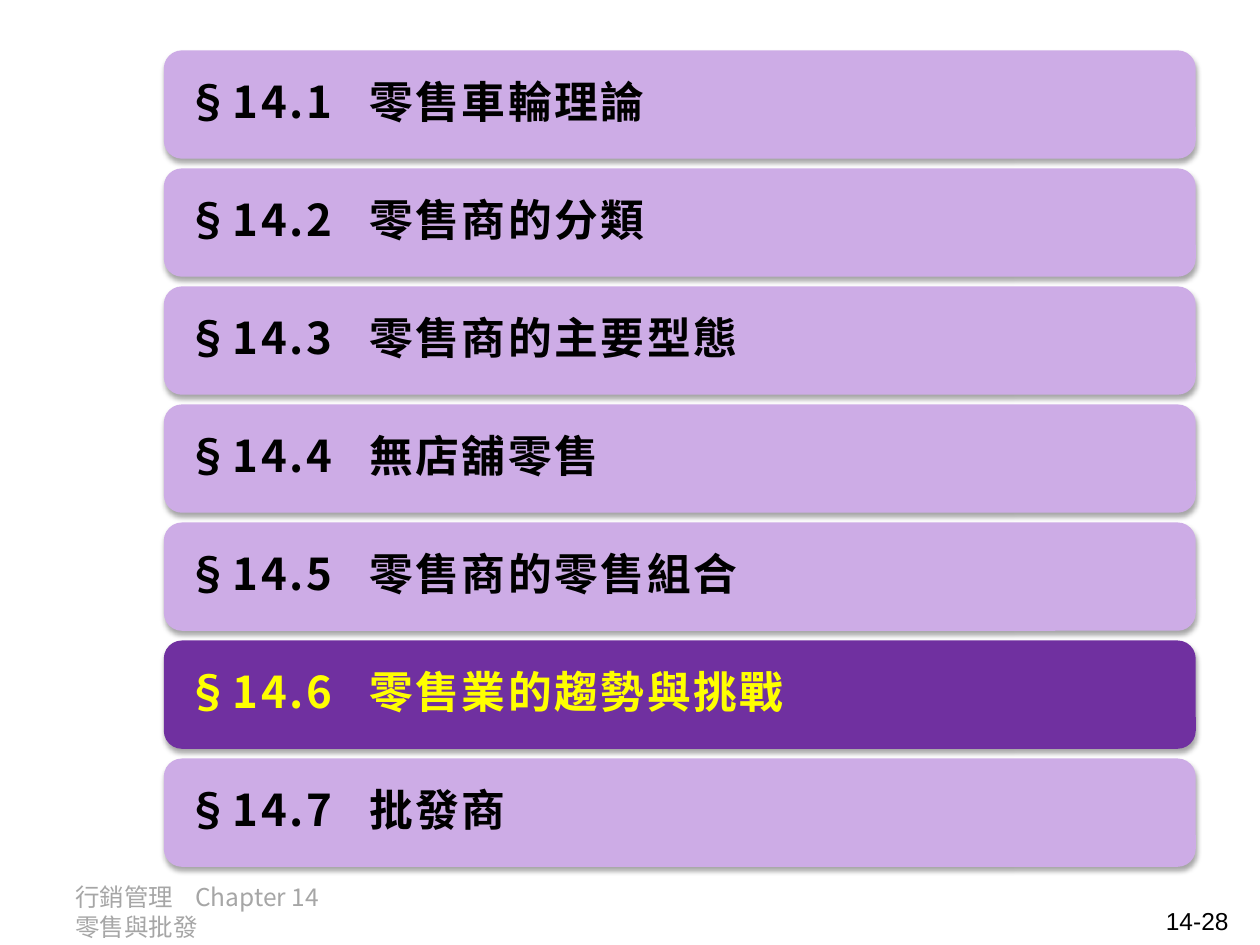
from typing import NamedTuple

from lxml.etree import SubElement
from pptx import Presentation
from pptx.dml.color import RGBColor
from pptx.enum.shapes import MSO_SHAPE
from pptx.enum.text import MSO_ANCHOR, PP_ALIGN
from pptx.oxml.ns import qn
from pptx.util import Inches, Pt

CJK_FONT = "Noto Sans CJK SC"
LATIN_FONT = "Arial"
LEFT, WIDTH, HEIGHT = 1.3, 8.19, 0.86
TOP, BOTTOM = 0.4, 6.88
TITLE_TAB = 1.45


class Section(NamedTuple):
    title: str
    fill: str = "CDACE6"
    color: str = "000000"


SECTIONS = [
    Section("零售車輪理論"),
    Section("零售商的分類"),
    Section("零售商的主要型態"),
    Section("無店舖零售"),
    Section("零售商的零售組合"),
    Section("零售業的趨勢與挑戰", fill="7030A0", color="FFFF00"),
    Section("批發商"),
]


def rgb(value: str) -> RGBColor:
    return RGBColor.from_string(value)


def set_attributes(target, values: dict) -> None:
    for name, value in values.items():
        setattr(target, name, value)


def add_tab_stop(paragraph, position: float) -> None:
    tabs = SubElement(paragraph._p.get_or_add_pPr(), qn("a:tabLst"))
    SubElement(tabs, qn("a:tab"), pos=str(Inches(position)), algn="l")


def add_run(paragraph, text: str, size: float, color: str, font: str,
            bold: bool = False, spacing: float = 0) -> None:
    """Add a run; spacing is the extra room between letters in points."""
    run = paragraph.add_run()
    run.text = text
    set_attributes(run.font, {"size": Pt(size), "bold": bold, "name": font})
    run.font.color.rgb = rgb(color)
    properties = run._r.get_or_add_rPr()
    if spacing:
        properties.set("spc", str(round(spacing * 100)))
    SubElement(properties, qn("a:ea"), typeface=CJK_FONT)


def add_soft_shadow(shape) -> None:
    shape.shadow.inherit = False
    effects = shape._element.spPr.find(qn("a:effectLst"))
    shadow = SubElement(effects, qn("a:outerShdw"), blurRad=str(Pt(3.1)),
                        dist=str(Pt(1.8)), dir="5400000", rotWithShape="0")
    color = SubElement(shadow, qn("a:srgbClr"), val="000000")
    SubElement(color, qn("a:alpha"), val="35000")


def add_section_bar(slide, index: int, section: Section) -> None:
    pitch = (BOTTOM - TOP - HEIGHT) / (len(SECTIONS) - 1)
    shape = slide.shapes.add_shape(
        MSO_SHAPE.ROUNDED_RECTANGLE, Inches(LEFT), Inches(TOP + index * pitch),
        Inches(WIDTH), Inches(HEIGHT))
    shape.fill.solid()
    shape.fill.fore_color.rgb = rgb(section.fill)
    shape.line.fill.background()
    add_soft_shadow(shape)
    set_attributes(shape.text_frame, {
        "word_wrap": True, "vertical_anchor": MSO_ANCHOR.MIDDLE,
        "margin_left": Inches(0.14), "margin_right": Inches(0.14),
        "margin_top": Inches(0.14), "margin_bottom": Inches(0.14)})
    paragraph = shape.text_frame.paragraphs[0]
    set_attributes(paragraph, {"alignment": PP_ALIGN.LEFT, "line_spacing": 0.9,
                               "space_after": Pt(8.75)})
    add_tab_stop(paragraph, TITLE_TAB)
    for text, font in ((f"§14.{index + 1}\t", CJK_FONT),
                       (section.title, LATIN_FONT)):
        add_run(paragraph, text, 25, section.color, font, bold=True, spacing=1.5)


def add_text_box(slide, left: float, top: float, width: float, height: float):
    """Add a wrapping text box and return its first paragraph."""
    box = slide.shapes.add_textbox(*map(Inches, (left, top, width, height)))
    box.text_frame.word_wrap = True
    return box.text_frame.paragraphs[0]


def main() -> None:
    presentation = Presentation()
    set_attributes(presentation, {"slide_width": Inches(10),
                                  "slide_height": Inches(7.5)})
    slide = presentation.slides.add_slide(presentation.slide_layouts[6])

    footer = add_text_box(slide, 0.5, 6.95, 2.45, 0.4)
    footer.line_spacing = Pt(17)
    add_tab_stop(footer, 0.95)
    add_run(footer, "行銷管理\tChapter 14", 14, "A6A6A6", CJK_FONT)
    footer.add_line_break()
    add_run(footer, "零售與批發", 14, "A6A6A6", CJK_FONT)

    page_number = add_text_box(slide, 7.52, 7.14, 2.33, 0.29)
    page_number.alignment = PP_ALIGN.RIGHT
    add_run(page_number, "14-28", 14, "000000", LATIN_FONT)

    for index, section in enumerate(SECTIONS):
        add_section_bar(slide, index, section)

    presentation.save("out.pptx")


if __name__ == "__main__":
    main()
